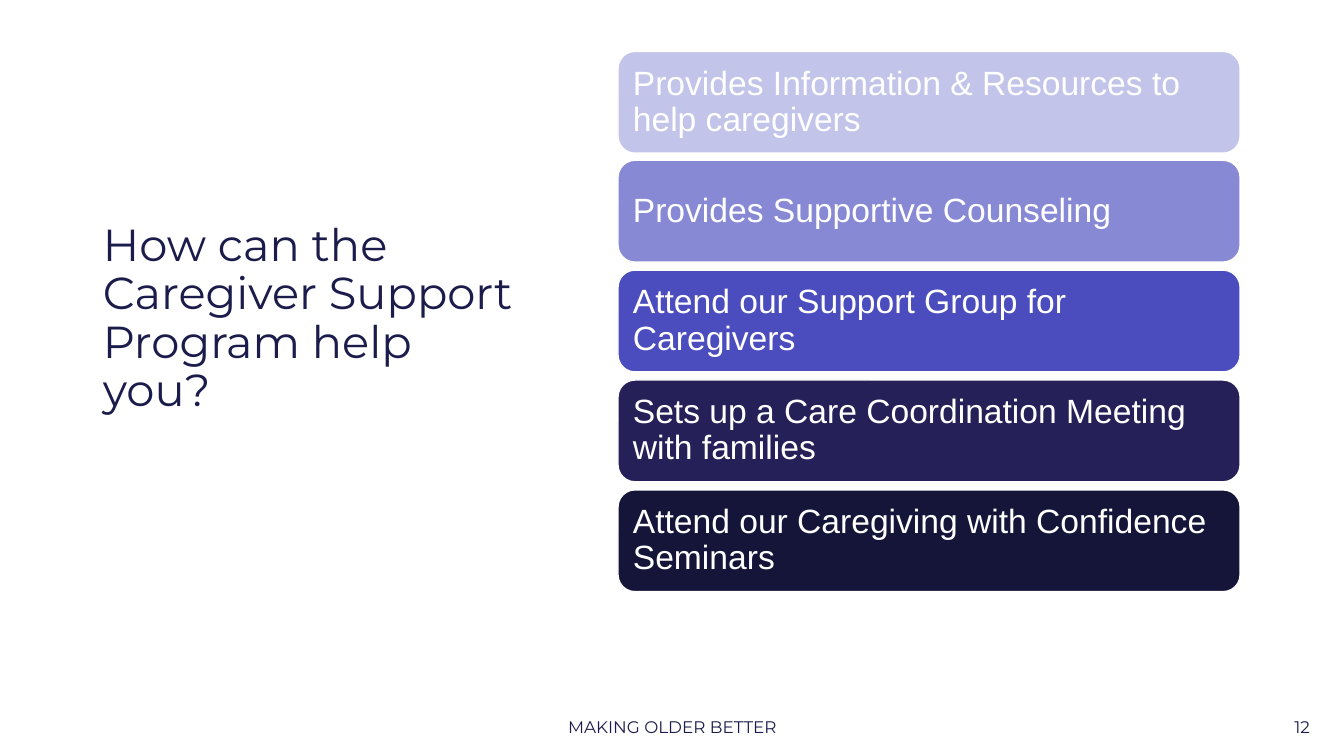
"""Build the slide on how the Caregiver Support Program helps."""
import pptx
import pptx.util
import pptx.dml.color
import pptx.enum.shapes
import pptx.enum.text

PX = 9144
NAVY = pptx.dml.color.RGBColor(0x1B, 0x1C, 0x4B)
WHITE = pptx.dml.color.RGBColor(0xFF, 0xFF, 0xFF)
LAVENDER = pptx.dml.color.RGBColor(0xC3, 0xC4, 0xE9)
PERIWINKLE = pptx.dml.color.RGBColor(0x87, 0x89, 0xD4)
INDIGO = pptx.dml.color.RGBColor(0x4B, 0x4D, 0xBE)
VIOLET = pptx.dml.color.RGBColor(0x25, 0x21, 0x58)
MIDNIGHT = pptx.dml.color.RGBColor(0x14, 0x15, 0x38)

ALIGN = pptx.enum.text.PP_ALIGN
ANCHOR = pptx.enum.text.MSO_ANCHOR
TITLE_FORMAT = {"name": "Montserrat", "size": pptx.util.Pt(32)}
FOOTER_FORMAT = {"name": "Montserrat", "size": pptx.util.Pt(12)}
SERVICE_FORMAT = {"name": "Arial", "size": pptx.util.Pt(24)}

SERVICES = [
    ("Provides Information & Resources to help caregivers", LAVENDER),
    ("Provides Supportive Counseling", PERIWINKLE),
    ("Attend our Support Group for Caregivers", INDIGO),
    ("Sets up a Care Coordination Meeting with families", VIOLET),
    ("Attend our Caregiving with Confidence Seminars", MIDNIGHT),
]
FIRST_TOP = 51
LAST_TOP = 486


def scale(*lengths):
    """Turn px lengths into EMU."""
    return [pptx.util.Emu(length * PX) for length in lengths]


def write_text(shape, text, font_format, color, anchor, alignment, line_spacing=1.0):
    """Put one formatted paragraph into a shape."""
    frame = shape.text_frame
    frame.word_wrap = True
    frame.auto_size = pptx.enum.text.MSO_AUTO_SIZE.NONE
    frame.vertical_anchor = anchor
    frame.text = text
    paragraph = frame.paragraphs[0]
    paragraph.alignment = alignment
    paragraph.line_spacing = line_spacing
    for name, value in font_format.items():
        setattr(paragraph.font, name, value)
    paragraph.font.color.rgb = color


def place_title(slide, text, left, top, width, height):
    """Move and fill the title placeholder."""
    title = slide.shapes.title
    title.left, title.top, title.width, title.height = scale(left, top, width, height)
    write_text(title, text, TITLE_FORMAT, NAVY, ANCHOR.MIDDLE, ALIGN.LEFT, 0.9)


def add_footer(slide, text, left, width, alignment):
    """Add a text box on the footer line."""
    box = slide.shapes.add_textbox(*scale(left, 688, width, 48))
    write_text(box, text, FOOTER_FORMAT, NAVY, ANCHOR.BOTTOM, alignment)


def add_service(slide, text, color, top):
    """Add one rounded bar naming a service."""
    bar = slide.shapes.add_shape(
        pptx.enum.shapes.MSO_SHAPE.ROUNDED_RECTANGLE, *scale(613, top, 617, 101))
    bar.shadow.inherit = False
    bar.fill.solid()
    bar.fill.fore_color.rgb = color
    bar.line.color.rgb = WHITE
    bar.line.width = pptx.util.Pt(1)
    for side in ("left", "top", "right", "bottom"):
        setattr(bar.text_frame, f"margin_{side}", pptx.util.Emu(10 * PX))
    write_text(bar, text, SERVICE_FORMAT, WHITE, ANCHOR.MIDDLE, ALIGN.LEFT, 0.9)


def main():
    """Assemble and save the slide."""
    presentation = pptx.Presentation()
    presentation.slide_width, presentation.slide_height = scale(1333, 750)
    slide = presentation.slides.add_slide(presentation.slide_layouts[5])
    place_title(slide, "How can the Caregiver Support Program help you?", 92, 50, 430, 534)
    for index, (text, color) in enumerate(SERVICES):
        top = FIRST_TOP + index * (LAST_TOP - FIRST_TOP) // (len(SERVICES) - 1)
        add_service(slide, text, color, top)
    add_footer(slide, "MAKING OLDER BETTER", 442, 450, ALIGN.CENTER)
    add_footer(slide, "12", 1237, 72, ALIGN.RIGHT)
    presentation.save("out.pptx")


if __name__ == "__main__":
    main()
